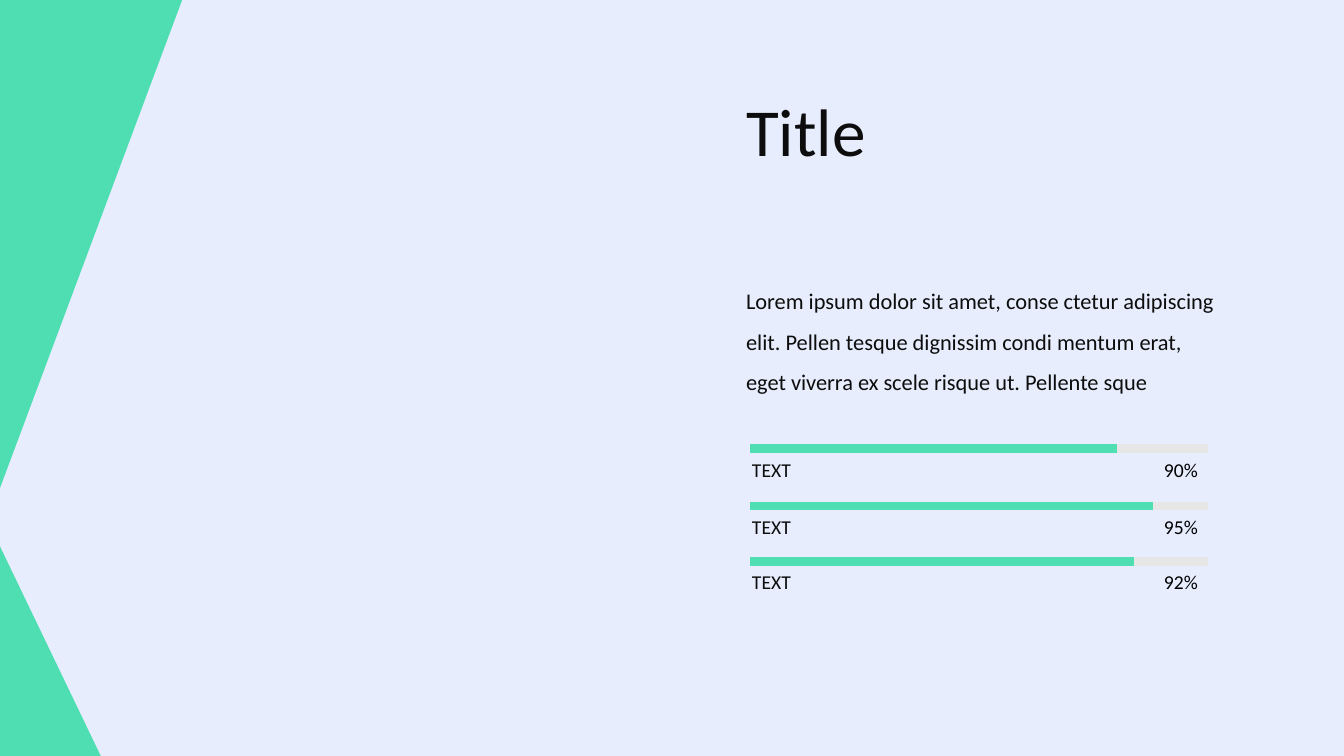
from dataclasses import dataclass

from lxml.etree import SubElement
from pptx import Presentation
from pptx.dml.color import RGBColor
from pptx.enum.shapes import MSO_CONNECTOR, MSO_SHAPE
from pptx.enum.text import MSO_ANCHOR, MSO_AUTO_SIZE, PP_ALIGN
from pptx.oxml.ns import qn
from pptx.shapes.autoshape import Shape
from pptx.slide import Slide
from pptx.util import Inches, Pt


@dataclass(frozen=True)
class Theme:
    font: str = "Calibri"
    background: RGBColor = RGBColor(0xE7, 0xED, 0xFD)
    accent: RGBColor = RGBColor(0x4F, 0xDE, 0xB2)
    track: RGBColor = RGBColor(0xE7, 0xE6, 0xE6)
    text: RGBColor = RGBColor(0x0D, 0x0D, 0x0D)
    value: RGBColor = RGBColor(0, 0, 0)
    title_size: int = 48
    body_size: int = 16
    label_size: int = 14
    bar_weight: int = 6


@dataclass(frozen=True)
class Box:
    left: float
    top: float
    width: float
    height: float


@dataclass(frozen=True)
class Progress:
    label: str
    value: str
    top: float
    filled: float


THEME = Theme()
BODY_TEXT = (
    "Lorem ipsum dolor sit amet, conse ctetur adipiscing elit. "
    "Pellen tesque dignissim condi mentum erat, eget viverra ex scele "
    "risque ut. Pellente sque"
)
PROGRESS = [
    Progress("TEXT", "90%", 4.45, 3.64),
    Progress("TEXT", "95%", 5.02, 4.0),
    Progress("TEXT", "92%", 5.57, 3.81),
]
BAR_LEFT, BAR_LENGTH = 7.44, 4.54


def place(shape: Shape, box: Box) -> None:
    shape.left, shape.top = Inches(box.left), Inches(box.top)
    shape.width, shape.height = Inches(box.width), Inches(box.height)


def format_text(shape: Shape, size: int, color: RGBColor = THEME.text,
                alignment: PP_ALIGN = PP_ALIGN.LEFT,
                line_spacing: float = 1.0) -> None:
    frame = shape.text_frame
    frame.word_wrap = True
    frame.auto_size = MSO_AUTO_SIZE.SHAPE_TO_FIT_TEXT
    frame.vertical_anchor = MSO_ANCHOR.TOP
    paragraph = frame.paragraphs[0]
    paragraph.alignment = alignment
    paragraph.line_spacing = line_spacing
    paragraph.space_before = Pt(0)
    paragraph.font.name = THEME.font
    paragraph.font.size = Pt(size)
    paragraph.font.color.rgb = color


def remove_bullet(shape: Shape) -> None:
    properties = shape.text_frame.paragraphs[0]._p.get_or_add_pPr()
    properties.set("marL", "0")
    properties.set("indent", "0")
    SubElement(properties, qn("a:buNone"))


def add_corner(slide: Slide, box: Box) -> Shape:
    corner = slide.shapes.add_shape(
        MSO_SHAPE.RIGHT_TRIANGLE, Inches(box.left), Inches(box.top),
        Inches(box.width), Inches(box.height))
    corner.shadow.inherit = False
    corner.fill.solid()
    corner.fill.fore_color.rgb = THEME.accent
    corner.line.fill.background()
    return corner


def add_bar(slide: Slide, top: float, length: float, color: RGBColor) -> None:
    bar = slide.shapes.add_connector(
        MSO_CONNECTOR.STRAIGHT, Inches(BAR_LEFT), Inches(top),
        Inches(BAR_LEFT + length), Inches(top))
    bar.line.color.rgb = color
    bar.line.width = Pt(THEME.bar_weight)
    SubElement(bar._element.spPr, qn("a:effectLst"))


def add_text(slide: Slide, box: Box, text: str, color: RGBColor,
             alignment: PP_ALIGN) -> None:
    text_box = slide.shapes.add_textbox(
        Inches(box.left), Inches(box.top), Inches(box.width), Inches(box.height))
    text_box.text_frame.text = text
    format_text(text_box, THEME.label_size, color, alignment)


def add_progress(slide: Slide, progress: Progress) -> None:
    add_bar(slide, progress.top, BAR_LENGTH, THEME.track)
    add_bar(slide, progress.top, progress.filled, THEME.accent)
    text_top = progress.top + 0.04
    add_text(slide, Box(7.36, text_top, 1.19, 0.37), progress.label,
             THEME.text, PP_ALIGN.LEFT)
    add_text(slide, Box(11.25, text_top, 0.73, 0.37), progress.value,
             THEME.value, PP_ALIGN.RIGHT)


def main() -> None:
    presentation = Presentation()
    presentation.slide_width = Inches(13.33)
    presentation.slide_height = Inches(7.5)
    slide = presentation.slides.add_slide(presentation.slide_layouts[1])
    slide.background.fill.solid()
    slide.background.fill.fore_color.rgb = THEME.background

    add_corner(slide, Box(0, 5.42, 1, 2.08))
    top_corner = add_corner(slide, Box(0, -0.01, 1.81, 4.85))
    top_corner.rotation = 180
    top_corner._element.spPr.xfrm.set("flipH", "1")

    title, body = slide.shapes.title, slide.placeholders[1]
    place(title, Box(7.3, 0.84, 3.81, 0.91))
    title.text_frame.text = "Title"
    format_text(title, THEME.title_size)

    place(body, Box(7.3, 2.67, 4.86, 1.27))
    body.text_frame.text = BODY_TEXT
    remove_bullet(body)
    format_text(body, THEME.body_size, line_spacing=1.5)

    for progress in PROGRESS:
        add_progress(slide, progress)

    presentation.save("out.pptx")


if __name__ == "__main__":
    main()
